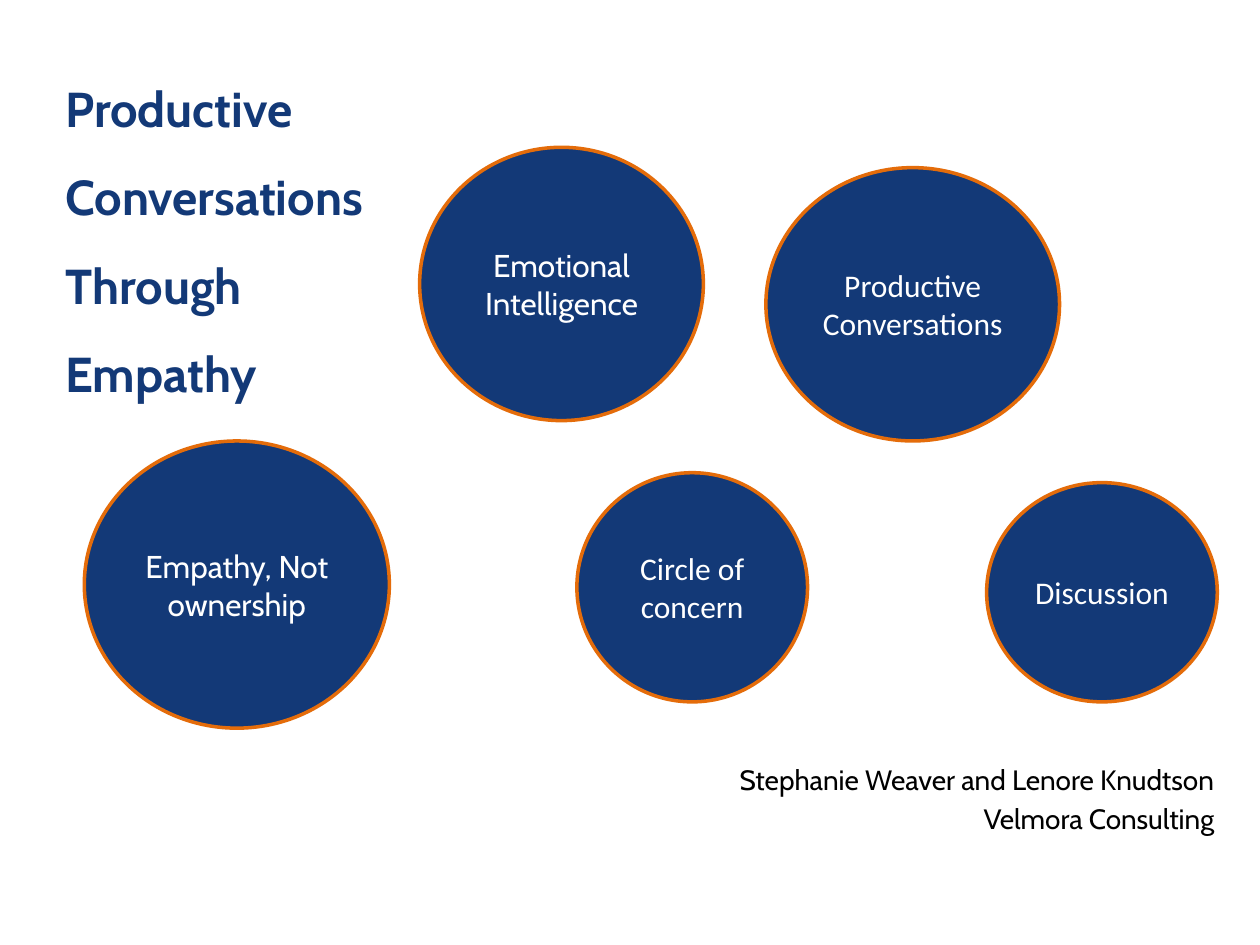
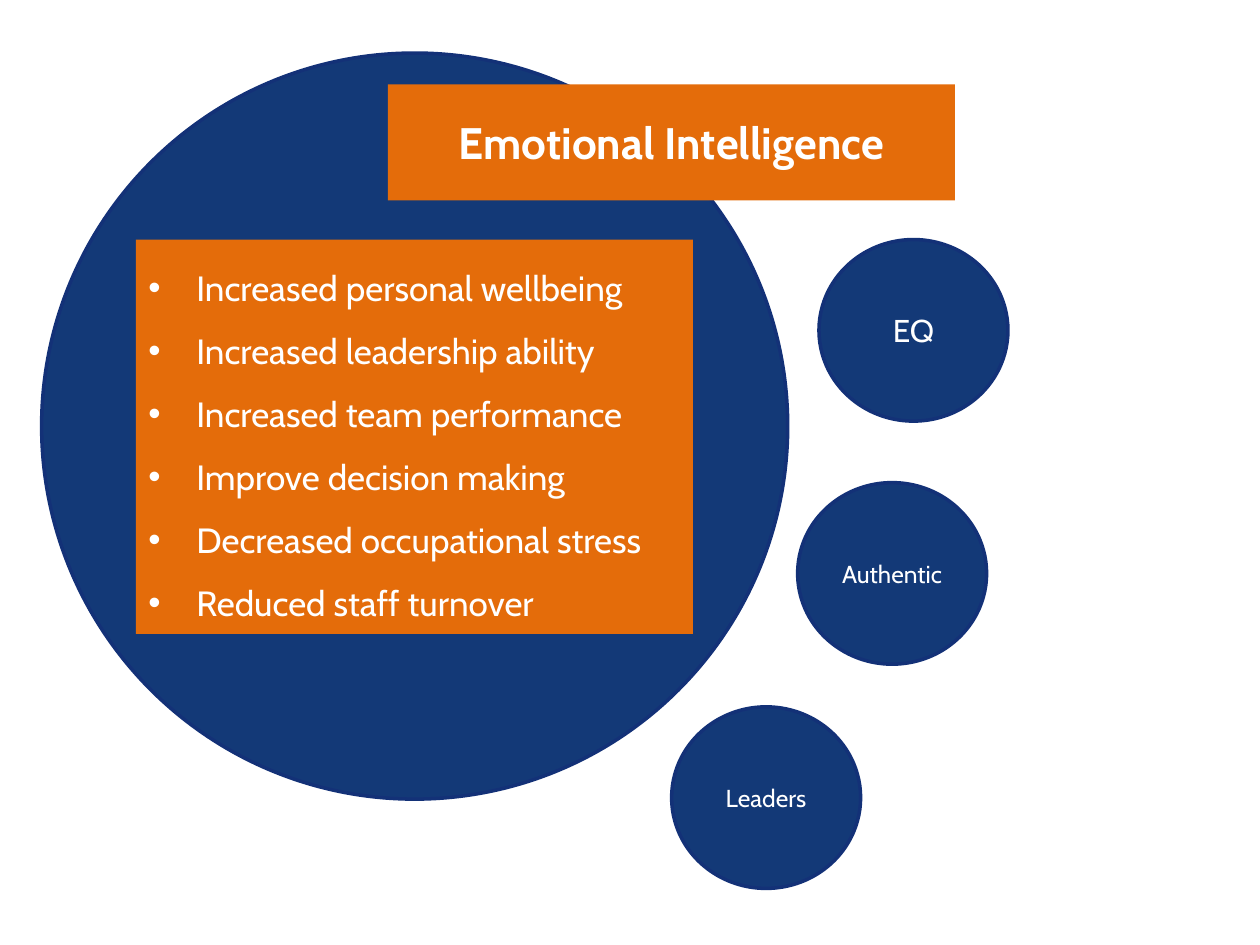
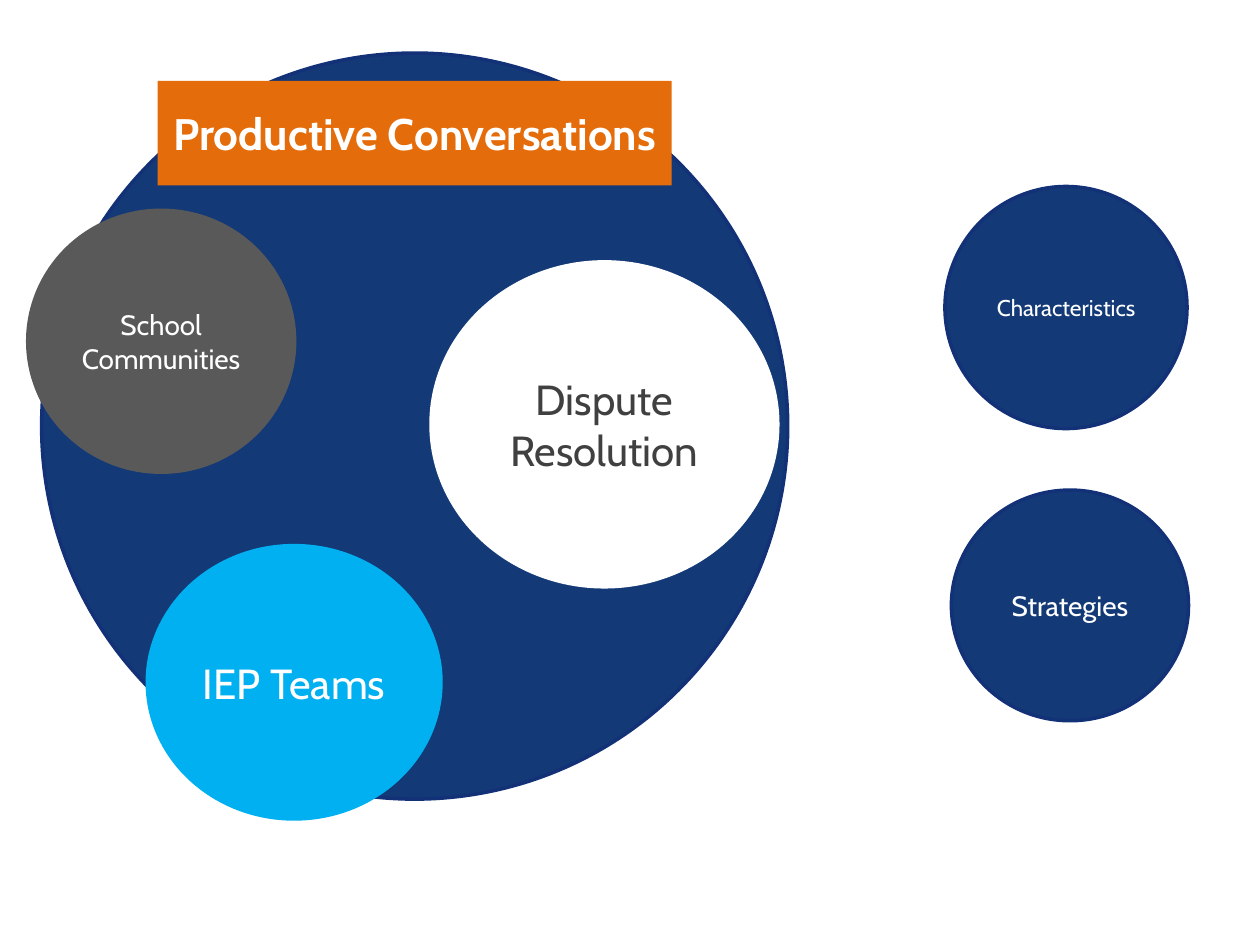
from lxml.etree import SubElement
from pptx import Presentation
from pptx.dml.color import RGBColor
from pptx.enum.shapes import MSO_SHAPE as Shape
from pptx.enum.text import MSO_ANCHOR as Anchor, PP_ALIGN as Align
from pptx.oxml.ns import qn
from pptx.util import Cm, Pt

COLORS = {
    "navy": "133977",
    "navy_edge": "133177",
    "orange": "E46C0A",
    "sky": "00B0F0",
    "gray": "595959",
    "dark": "404040",
    "white": "FFFFFF",
    "black": "000000",
}
FONT = "Cabin"
BIG_CIRCLE = (0.84, 1.07, 15.04, 15.04)
SMALL_SIZE = (3.81, 3.66)


def rgb(name):
    """Return the named colour."""
    return RGBColor.from_string(COLORS[name])


def format_text(tf, size, color="white", font=FONT, bold=False,
                align=Align.CENTER, spacing=None):
    """Wrap the text and format every paragraph and run."""
    tf.word_wrap = True
    for p in tf.paragraphs:
        p.alignment = align
        if spacing:
            p.line_spacing = spacing
        for r in p.runs:
            r.font.size = Pt(size)
            r.font.name = font
            r.font.bold = bold
            r.font.color.rgb = rgb(color)


def add_filled(s, kind, at, fill, edge=None):
    """Add a flat shape with an optional outline."""
    sp = s.shapes.add_shape(kind, *map(Cm, at))
    sp.shadow.inherit = False
    sp.fill.solid()
    sp.fill.fore_color.rgb = rgb(fill)
    if edge:
        sp.line.color.rgb = rgb(edge)
        sp.line.width = Pt(2)
    else:
        sp.line.fill.background()
    return sp


def add_circle(s, at, text="", size=18, fill="navy", edge="navy_edge",
               color="white", font=FONT):
    """Add an ellipse with a centred label."""
    sp = add_filled(s, Shape.OVAL, at, fill, edge)
    if text:
        tf = sp.text_frame
        tf.text = text
        tf.vertical_anchor = Anchor.MIDDLE
        format_text(tf, size, color, font)


def add_banner(s, at, text):
    """Add the orange title band."""
    tf = add_filled(s, Shape.RECTANGLE, at, "orange").text_frame
    tf.text = text
    tf.vertical_anchor = Anchor.MIDDLE
    format_text(tf, 25.2, bold=True)


def add_text(s, at, text, anchor=Anchor.TOP, **style):
    """Add a formatted text box and return its text frame."""
    tf = s.shapes.add_textbox(*map(Cm, at)).text_frame
    tf.text = text
    tf.vertical_anchor = anchor
    format_text(tf, **style)
    return tf


def add_bullet_panel(s, at, items):
    """Add an orange panel holding a bulleted list."""
    tf = add_filled(s, Shape.RECTANGLE, at, "orange").text_frame
    tf.text = "\n".join(items)
    tf.vertical_anchor = Anchor.TOP
    for p in tf.paragraphs:
        pPr = p._p.get_or_add_pPr()
        pPr.set("marL", str(Cm(0.97)))
        pPr.set("indent", str(-Cm(0.97)))
        SubElement(pPr, qn("a:buFont")).set("typeface", "Arial")
        SubElement(pPr, qn("a:buChar")).set("char", "•")
    format_text(tf, 20, align=Align.LEFT, spacing=1.5)


def build_cover(s):
    """Build the cover with its five topic circles."""
    topics = [
        ("Discussion", "Calibri", (19.89, 9.73, 4.65, 4.42)),
        ("Productive Conversations", "Calibri", (15.44, 3.38, 5.92, 5.51)),
        ("Circle of concern", "Calibri", (11.63, 9.53, 4.65, 4.62)),
        ("Emotional Intelligence", FONT, (8.46, 2.97, 5.72, 5.51)),
        ("Empathy, Not ownership", FONT, (1.7, 8.89, 6.15, 5.79)),
    ]
    for text, font, at in topics:
        add_circle(s, at, text, edge="orange", font=font)
    tf = add_text(s, (14.27, 15.24, 10.46, 1.91),
                  "Stephanie Weaver and Lenore Knudtson\nVelmora Consulting",
                  size=16, color="black", align=Align.RIGHT)
    tf.paragraphs[1].space_before = Pt(3.2)
    add_text(s, (1.07, 0.84, 8.26, 7.42),
             "Productive\vConversations\vThrough\vEmpathy", Anchor.MIDDLE,
             size=28, color="navy", bold=True, align=Align.LEFT, spacing=1.5)


def build_intelligence(s):
    """Build the emotional intelligence slide."""
    add_circle(s, BIG_CIRCLE)
    for text, size, left, top in [("Leaders", 14, 13.54, 14.25),
                                  ("Authentic", 14, 16.08, 9.73),
                                  ("EQ", 18, 16.51, 4.83)]:
        add_circle(s, (left, top, *SMALL_SIZE), text, size)
    add_bullet_panel(s, (2.74, 4.83, 11.23, 7.95), [
        "Increased personal wellbeing",
        "Increased leadership ability",
        "Increased team performance",
        "Improve decision making",
        "Decreased occupational stress",
        "Reduced staff turnover",
    ])
    add_banner(s, (7.82, 1.7, 11.43, 2.34), "Emotional Intelligence")


def build_conversations(s):
    """Build the productive conversations slide."""
    add_circle(s, BIG_CIRCLE)
    add_circle(s, (19.18, 9.88, 4.78, 4.65), "Strategies", 16)
    add_circle(s, (19.05, 3.76, 4.88, 4.88), "Characteristics", 13)
    for text, size, fill, color, at in [
        ("Dispute Resolution", 24, "white", "dark", (8.69, 5.28, 6.99, 6.55)),
        ("IEP Teams", 24, "sky", "white", (2.97, 11, 5.92, 5.51)),
        ("School Communities", 16, "gray", "white", (0.56, 4.24, 5.38, 5.28)),
    ]:
        add_circle(s, at, text, size, fill, fill, color)
    add_banner(s, (3.18, 1.63, 10.36, 2.11), "Productive Conversations")


def main():
    """Build and save the presentation."""
    prs = Presentation()
    prs.slide_width, prs.slide_height = Cm(25.4), Cm(19.05)
    for build in (build_cover, build_intelligence, build_conversations):
        build(prs.slides.add_slide(prs.slide_layouts[6]))
    prs.save("out.pptx")


if __name__ == "__main__":
    main()
